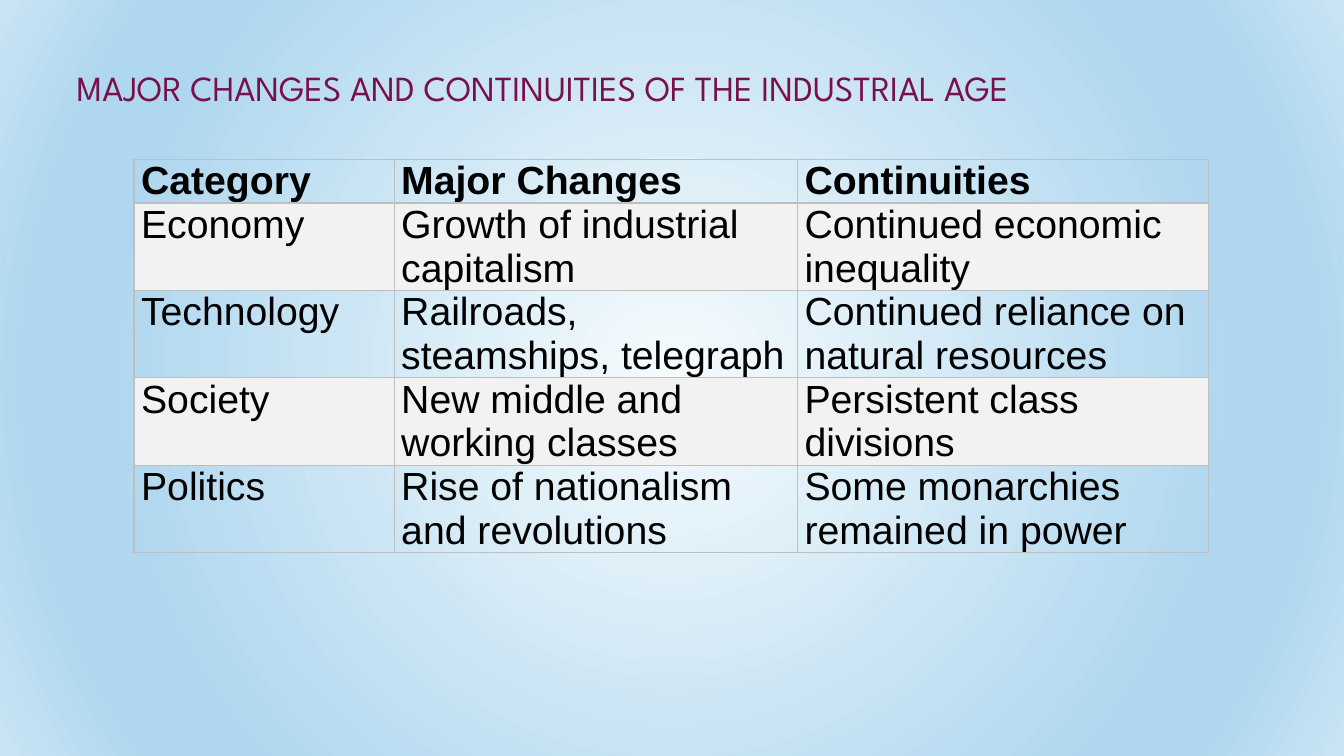
from dataclasses import dataclass

from lxml import etree
from pptx import Presentation
from pptx.dml.color import RGBColor
from pptx.enum.text import MSO_ANCHOR, MSO_AUTO_SIZE, PP_ALIGN
from pptx.oxml.ns import qn
from pptx.util import Inches, Pt

BOTTOM, TOP = MSO_ANCHOR.BOTTOM, MSO_ANCHOR.TOP
LEFT = PP_ALIGN.LEFT
NO_AUTOFIT = MSO_AUTO_SIZE.NONE
TITLE_ONLY = 5

TITLE = "MAJOR CHANGES AND CONTINUITIES OF THE INDUSTRIAL AGE"
ROWS = [
    ("Category", "Major Changes", "Continuities"),
    ("Economy", "Growth of industrial capitalism", "Continued economic inequality"),
    ("Technology", "Railroads, steamships, telegraph", "Continued reliance on natural resources"),
    ("Society", "New middle and working classes", "Persistent class divisions"),
    ("Politics", "Rise of nationalism and revolutions", "Some monarchies remained in power"),
]

SLIDE_SIZE = (13.33, 7.5)
TITLE_BOX = (0.66, 0.25, 11.67, 0.88)
TABLE_ORIGIN = (1.33, 1.58)
COLUMN_WIDTHS = (2.58, 4, 4.08)
LINE_HEIGHT = 0.43
CELL_INSET = 0.07


@dataclass(frozen=True)
class Theme:
    title_font: str = "League Spartan"
    body_font: str = "Arial"
    title_size: float = 25.2
    body_size: float = 28
    title_color: str = "781049"
    text_color: str = "000000"
    band: str = "F2F2F2"
    border: str = "BFBFBF"
    border_width: float = 1
    glow: tuple = ((0, "F6FBFD"), (74, "AFD7EF"), (83, "AFD7EF"), (100, "CAE4F4"))


THEME = Theme()


def write_text(frame, text, *, font, size, color, bold=False, spacing=1.0):
    frame.word_wrap = True
    paragraph = frame.paragraphs[0]
    paragraph.alignment = LEFT
    paragraph.line_spacing = spacing
    run = paragraph.add_run()
    run.text = text
    run.font.name = font
    run.font.size = Pt(size)
    run.font.bold = bold
    run.font.color.rgb = RGBColor.from_string(color)


def add_child(parent, tag, **attributes):
    return etree.SubElement(parent, qn(tag), attributes)


def paint_background(slide):
    slide.background.fill.gradient()
    gradient = slide.element.xpath(".//p:bgPr/a:gradFill")[0]
    for child in list(gradient):
        gradient.remove(child)
    stops = add_child(gradient, "a:gsLst")
    for position, color in THEME.glow:
        stop = add_child(stops, "a:gs", pos=str(position * 1000))
        add_child(stop, "a:srgbClr", val=color)
    circle = add_child(gradient, "a:path", path="circle")
    add_child(circle, "a:fillToRect", l="50000", t="50000", r="50000", b="50000")


def draw_borders(cell):
    properties = cell._tc.get_or_add_tcPr()
    for side in ("a:lnL", "a:lnR", "a:lnT", "a:lnB"):
        line = add_child(properties, side, w=str(Pt(THEME.border_width)))
        fill = add_child(line, "a:solidFill")
        add_child(fill, "a:srgbClr", val=THEME.border)


def add_title(slide):
    title = slide.shapes.title
    title.left, title.top, title.width, title.height = map(Inches, TITLE_BOX)
    frame = title.text_frame
    frame.auto_size = NO_AUTOFIT
    frame.vertical_anchor = BOTTOM
    write_text(frame, TITLE, font=THEME.title_font, size=THEME.title_size,
               color=THEME.title_color, spacing=0.9)


def add_comparison(slide):
    heights = [LINE_HEIGHT] + [2 * LINE_HEIGHT] * (len(ROWS) - 1)
    bounds = (*TABLE_ORIGIN, sum(COLUMN_WIDTHS), sum(heights))
    table = slide.shapes.add_table(len(ROWS), len(COLUMN_WIDTHS), *map(Inches, bounds)).table
    for column, width in zip(table.columns, COLUMN_WIDTHS):
        column.width = Inches(width)
    for row_index, (row, height, texts) in enumerate(zip(table.rows, heights, ROWS)):
        row.height = Inches(height)
        for cell, text in zip(row.cells, texts):
            cell.margin_left = cell.margin_right = Inches(CELL_INSET)
            cell.margin_top = cell.margin_bottom = 0
            cell.vertical_anchor = TOP
            draw_borders(cell)
            if row_index % 2:
                cell.fill.solid()
                cell.fill.fore_color.rgb = RGBColor.from_string(THEME.band)
            else:
                cell.fill.background()
            write_text(cell.text_frame, text, font=THEME.body_font, size=THEME.body_size,
                       color=THEME.text_color, bold=row_index == 0)


def main():
    presentation = Presentation()
    presentation.slide_width, presentation.slide_height = map(Inches, SLIDE_SIZE)
    slide = presentation.slides.add_slide(presentation.slide_layouts[TITLE_ONLY])
    paint_background(slide)
    add_title(slide)
    add_comparison(slide)
    presentation.save("out.pptx")


if __name__ == "__main__":
    main()
